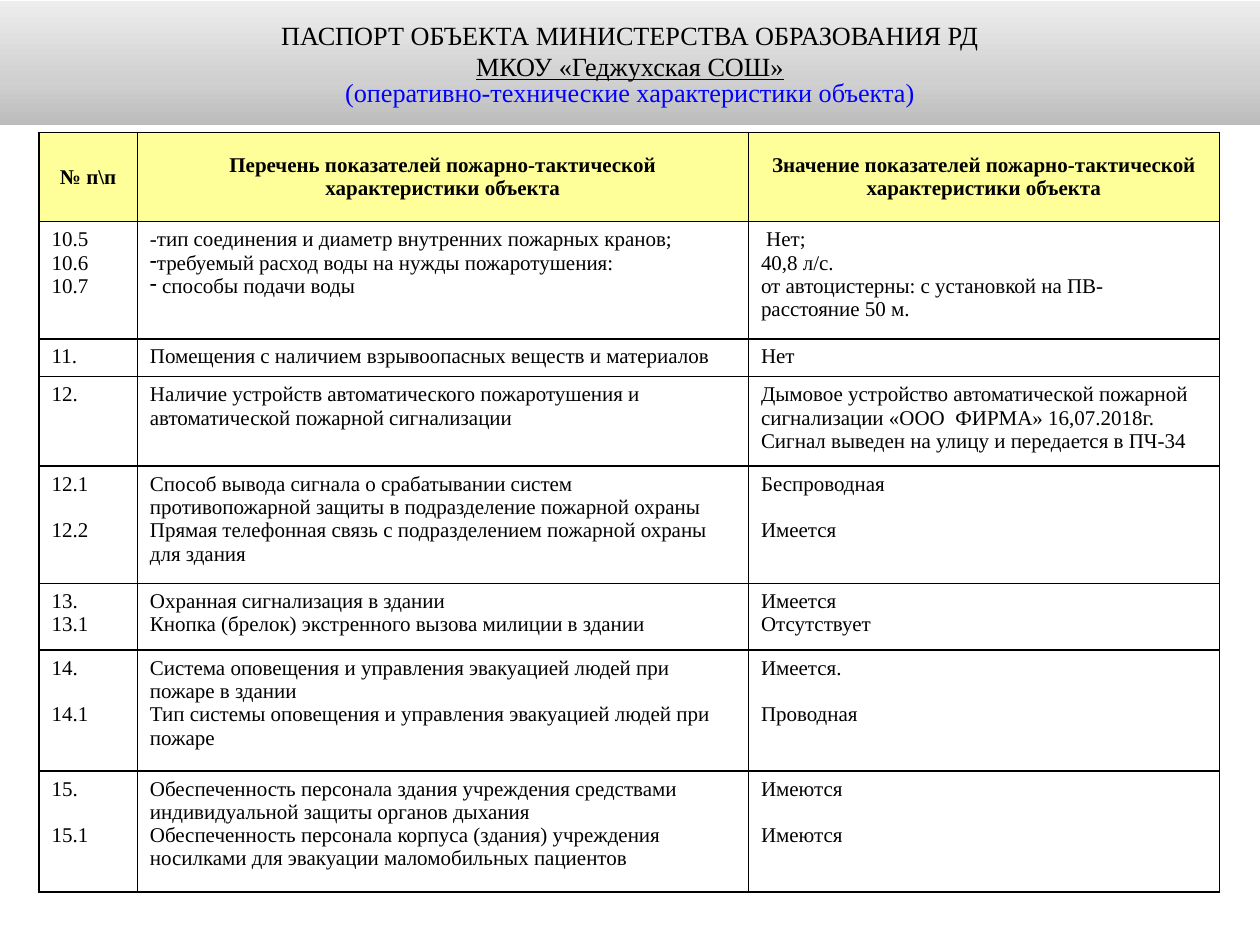
from copy import deepcopy

from lxml.etree import SubElement
from pptx import Presentation
from pptx.dml.color import RGBColor
from pptx.enum.shapes import MSO_SHAPE
from pptx.enum.text import MSO_ANCHOR, PP_ALIGN
from pptx.oxml.ns import qn
from pptx.util import Inches, Pt

TITLE_FORMAT = {"name": "Times New Roman", "size": Pt(15)}
BODY_FORMAT = {"name": "Times New Roman", "size": Pt(12), "bold": False}
HEADER_FORMAT = {**BODY_FORMAT, "bold": True}

TITLE_LINES = [
    ("ПАСПОРТ ОБЪЕКТА МИНИСТЕРСТВА ОБРАЗОВАНИЯ РД", "000000", {}, {}),
    ("МКОУ «Геджухская СОШ»", "000000", {"underline": True}, {}),
    ("(оперативно-технические характеристики объекта)", "0000FF", {},
     {"line_spacing": 0.8}),
]
GRADIENT = [(0, "BCBCBC"), (0.35, "D0D0D0"), (1, "EDEDED")]

COLUMN_WIDTHS = [0.78, 4.85, 3.74]
HEADER_HEIGHT = 0.71
HEADERS = [
    "№ п\\п",
    "Перечень показателей пожарно-тактической характеристики объекта",
    "Значение показателей пожарно-тактической характеристики объекта",
]
LINE_GAP = Pt(13.4)
ROWS = [
    (0.93, False, [
        ["10.5", "10.6", "10.7"],
        ["-тип соединения и диаметр внутренних пожарных кранов;",
         "-требуемый расход воды на нужды пожаротушения:",
         "- способы подачи воды"],
        [" Нет;", "40,8 л/с.",
         "от автоцистерны: с установкой на ПВ- расстояние 50 м."]]),
    (0.3, False, [
        ["11."],
        ["Помещения с наличием взрывоопасных веществ и материалов"],
        ["Нет"]]),
    (0.71, False, [
        ["12."],
        ["Наличие устройств автоматического пожаротушения и "
         "автоматической пожарной сигнализации"],
        ["Дымовое устройство автоматической пожарной сигнализации "
         "«ООО  ФИРМА» 16,07.2018г. Сигнал выведен на улицу и передается "
         "в ПЧ-34"]]),
    (0.93, True, [
        ["12.1", "12.2"],
        ["Способ вывода сигнала о срабатывании систем противопожарной "
         "защиты в подразделение пожарной охраны",
         "Прямая телефонная связь с подразделением пожарной охраны "
         "для здания"],
        ["Беспроводная", "Имеется"]]),
    (0.53, False, [
        ["13.", "13.1"],
        ["Охранная сигнализация в здании",
         "Кнопка (брелок) экстренного вызова милиции в здании"],
        ["Имеется", "Отсутствует"]]),
    (0.96, True, [
        ["14.", "14.1"],
        ["Система оповещения и управления эвакуацией людей при пожаре "
         "в здании",
         "Тип системы оповещения и управления эвакуацией людей при пожаре"],
        ["Имеется.", "Проводная"]]),
    (0.96, True, [
        ["15.", "15.1"],
        ["Обеспеченность персонала здания учреждения средствами "
         "индивидуальной защиты органов дыхания",
         "Обеспеченность персонала корпуса (здания) учреждения носилками "
         "для эвакуации маломобильных пациентов"],
        ["Имеются", "Имеются"]]),
]


def color(value):
    """Turn a hex string into a colour."""
    return RGBColor.from_string(value)


def apply(target, values):
    """Set attributes of an object from a dict."""
    for name, value in values.items():
        setattr(target, name, value)


def write_paragraph(frame, index, text, font, hue="000000", layout=None):
    """Write one formatted paragraph into a text frame."""
    para = frame.add_paragraph() if index else frame.paragraphs[0]
    apply(para, layout or {})
    span = para.add_run()
    span.text = text
    apply(span.font, font)
    span.font.color.rgb = color(hue)
    return para


def add_dash(para):
    """Give a paragraph a dash as its bullet."""
    properties = para._p.get_or_add_pPr()
    properties.set("marL", "0")
    properties.set("indent", "0")
    SubElement(properties, qn("a:buChar"), char="-")


def style_cell(cell, fill):
    """Draw black borders around a cell and fill it."""
    properties = cell._tc.get_or_add_tcPr()
    for side in ("lnL", "lnR", "lnT", "lnB"):
        border = SubElement(properties, qn(f"a:{side}"), w=str(Pt(1)))
        paint = SubElement(border, qn("a:solidFill"))
        SubElement(paint, qn("a:srgbClr"), val="000000")
    cell.fill.solid()
    cell.fill.fore_color.rgb = color(fill)


def fill_gradient(shape, stops, angle):
    """Fill a shape with a linear gradient of three stops."""
    shape.fill.gradient()
    shape.fill.gradient_angle = angle
    stop_list = shape._element.spPr.find(".//" + qn("a:gsLst"))
    stop_list.append(deepcopy(stop_list[0]))
    for stop, (position, hue) in zip(shape.fill.gradient_stops, stops):
        stop.position = position
        stop.color.rgb = color(hue)


def add_title_band(page, left, top, width, height):
    """Place the gradient band with the title lines."""
    band = page.shapes.add_shape(MSO_SHAPE.RECTANGLE, left, top, width, height)
    band.shadow.inherit = False
    band.line.fill.background()
    fill_gradient(band, GRADIENT, 90)
    frame = band.text_frame
    apply(frame, {"word_wrap": True, "vertical_anchor": MSO_ANCHOR.MIDDLE,
                  "margin_left": Inches(0.09), "margin_right": Inches(0.09)})
    for index, (text, hue, font, layout) in enumerate(TITLE_LINES):
        write_paragraph(frame, index, text, {**TITLE_FORMAT, **font}, hue,
                        {"alignment": PP_ALIGN.CENTER, **layout})


def fill_body_row(table, row, spaced, cells):
    """Write the cells of one body row."""
    for column, lines in enumerate(cells):
        cell = table.cell(row, column)
        style_cell(cell, "FFFFFF")
        for index, line in enumerate(lines):
            bulleted = index > 0 and line.startswith("-")
            gap = LINE_GAP if spaced and index and column != 1 else Pt(0)
            para = write_paragraph(cell.text_frame, index,
                                   line[1:] if bulleted else line,
                                   BODY_FORMAT, layout={"space_before": gap})
            if bulleted:
                add_dash(para)


def add_indicator_table(page, left, top, width, height):
    """Place the table of fire safety indicators."""
    table = page.shapes.add_table(len(ROWS) + 1, len(HEADERS), left, top,
                                  width, height).table
    apply(table, {"first_row": False, "horz_banding": False})
    for column, size in zip(table.columns, COLUMN_WIDTHS):
        column.width = Inches(size)
    table.rows[0].height = Inches(HEADER_HEIGHT)
    for column, text in enumerate(HEADERS):
        cell = table.cell(0, column)
        style_cell(cell, "FFFF99")
        cell.vertical_anchor = MSO_ANCHOR.MIDDLE
        write_paragraph(cell.text_frame, 0, text, HEADER_FORMAT,
                        layout={"alignment": PP_ALIGN.CENTER})
    for row, (size, spaced, cells) in enumerate(ROWS, 1):
        table.rows[row].height = Inches(size)
        fill_body_row(table, row, spaced, cells)


def main():
    """Build the slide and save it."""
    deck = Presentation()
    apply(deck, {"slide_width": Inches(10), "slide_height": Inches(7.5)})
    page = deck.slides.add_slide(deck.slide_layouts[6])
    add_indicator_table(page, Inches(0.31), Inches(1.05), Inches(9.37),
                        Inches(6.03))
    add_title_band(page, Inches(0), Inches(0.01), Inches(10), Inches(0.98))
    deck.save("out.pptx")


if __name__ == "__main__":
    main()
